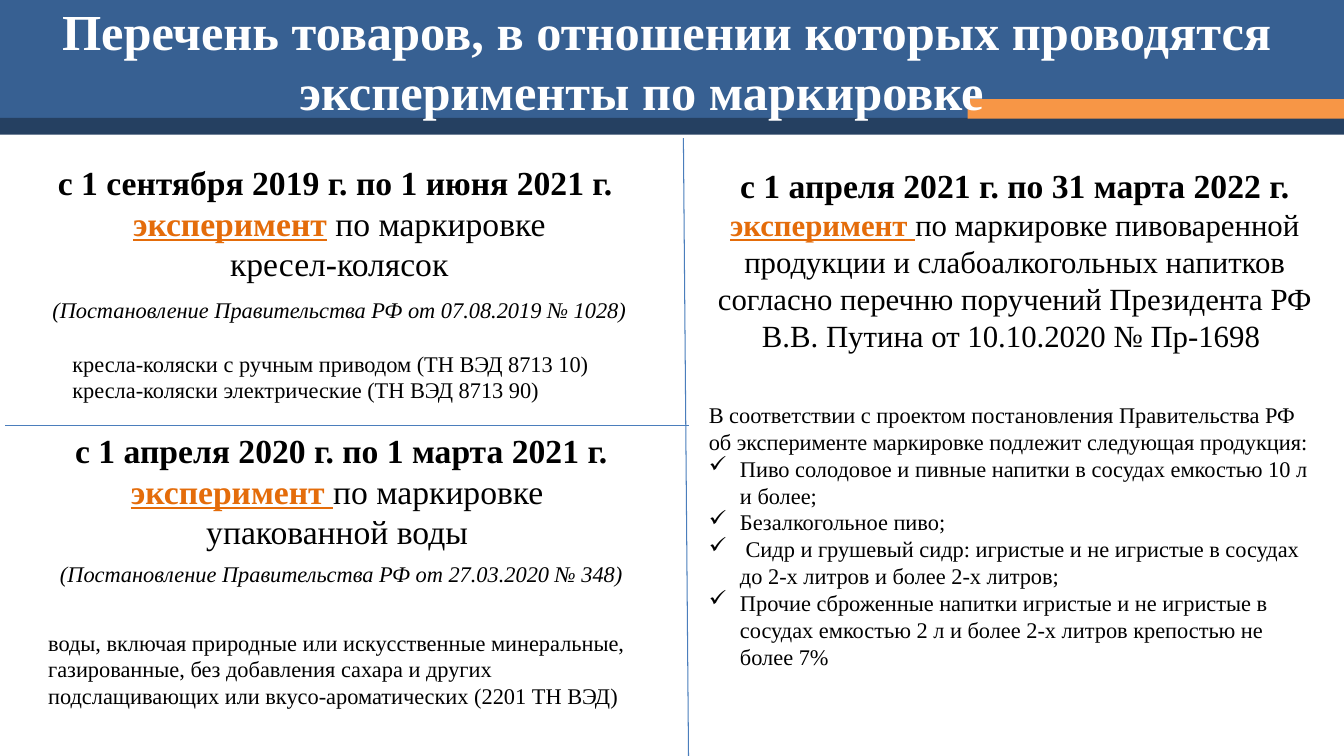
from dataclasses import dataclass

from lxml import etree
from pptx import Presentation, util as u
from pptx.dml.color import RGBColor
from pptx.enum import shapes, text
from pptx.oxml.ns import qn


@dataclass(frozen=True)
class Theme:
    font: str = "Times New Roman"
    blue: str = "376092"
    navy: str = "254061"
    orange: str = "F79646"
    accent: str = "E46C0A"
    rule: str = "4B7EBC"
    black: str = "000000"
    white: str = "FFFFFF"
    title: int = 36
    heading: int = 24
    lead: int = 22
    body: int = 16


THEME = Theme()


def add_span(para, wording, size=THEME.body, color=THEME.black, **style):
    """Add a run; style takes bold, italic and underline."""
    span = para.add_run()
    span.text = wording
    span.font.name = THEME.font
    span.font.size = u.Pt(size)
    span.font.color.rgb = RGBColor.from_string(color)
    for name, value in style.items():
        setattr(span.font, name, value)


class SlideBuilder:
    """Places elements by percentages of the slide's width and height."""

    def __init__(self, deck, theme):
        self.deck, self.theme = deck, theme
        self.page = deck.slides.add_slide(deck.slide_layouts[5])

    def across(self, share):
        return round(self.deck.slide_width * share / 100)

    def down(self, share):
        return round(self.deck.slide_height * share / 100)

    def area(self, left, top, width, height):
        return self.across(left), self.down(top), self.across(width), self.down(height)

    def band(self, place, color):
        bar = self.page.shapes.add_shape(shapes.MSO_SHAPE.RECTANGLE, *self.area(*place))
        bar.shadow.inherit = False
        bar.fill.solid()
        bar.fill.fore_color.rgb = RGBColor.from_string(color)
        bar.line.fill.background()

    def rule(self, start, end):
        line = self.page.shapes.add_connector(
            shapes.MSO_CONNECTOR.STRAIGHT,
            self.across(start[0]), self.down(start[1]),
            self.across(end[0]), self.down(end[1]))
        line.line.color.rgb = RGBColor.from_string(self.theme.rule)
        line.line.width = u.Pt(0.75)
        etree.SubElement(line.element.spPr, qn("a:effectLst"))

    def title(self, place, lines, last_indent):
        box = self.page.shapes.title
        box.left, box.top, box.width, box.height = self.area(*place)
        box.element.getparent().append(box.element)  # in front of the bands
        frame = box.text_frame
        frame.auto_size = text.MSO_AUTO_SIZE.NONE
        frame.vertical_anchor = text.MSO_ANCHOR.MIDDLE
        frame.margin_top = frame.margin_bottom = 0
        for index, line in enumerate(lines):
            para = frame.add_paragraph() if index else frame.paragraphs[0]
            para.alignment = text.PP_ALIGN.CENTER
            add_span(para, line, self.theme.title, self.theme.white, bold=True)
        para._p.get_or_add_pPr().set("marR", str(u.Inches(last_indent)))

    def text_box(self, place, paragraphs, centered=False, bullets_from=None, last_gap=0):
        """Each paragraph is a list of (wording, format) spans."""
        frame = self.page.shapes.add_textbox(*self.area(*place)).text_frame
        frame.word_wrap = True
        for index, spans in enumerate(paragraphs):
            para = frame.add_paragraph() if index else frame.paragraphs[0]
            if bullets_from is not None and index >= bullets_from:
                self.bullet(para)
            para.alignment = text.PP_ALIGN.CENTER if centered else text.PP_ALIGN.LEFT
            for wording, style in spans:
                add_span(para, wording, **style)
        if last_gap:
            para.space_before = u.Pt(last_gap)

    def bullet(self, para):
        props = para._p.get_or_add_pPr()
        props.set("marL", str(u.Inches(0.31)))
        props.set("indent", str(-u.Inches(0.31)))
        etree.SubElement(props, qn("a:buChar"), char="✓")


def main():
    deck = Presentation()
    deck.slide_width, deck.slide_height = u.Inches(13.33), u.Inches(7.5)
    slide = SlideBuilder(deck, THEME)

    # Text formats
    period = dict(size=THEME.heading, bold=True)
    plain = dict(size=THEME.heading)
    lead = dict(size=THEME.lead)
    decree = dict(italic=True)
    marked = dict(color=THEME.accent, bold=True, underline=True)

    # Header
    slide.band((0, 0, 100, 16), THEME.blue)
    slide.band((0, 15.6, 100, 2.2), THEME.navy)
    slide.band((72, 13.1, 28, 2.6), THEME.orange)
    slide.title((-0.38, 0, 100, 16),
                ["Перечень товаров, в отношении которых проводятся",
                 "эксперименты по маркировке"], last_indent=0.5)

    # Dividers
    slide.rule((50.85, 18.27), (51.23, 100))
    slide.rule((0.38, 56.27), (51.23, 56.27))

    # Wheelchairs
    slide.text_box((0.83, 20.8, 48.83, 22.9), [
        [("с 1 сентября 2019 г. по 1 июня 2021 г. ", period)],
        [("эксперимент", plain | marked), (" по маркировке", plain)],
        [("кресел-колясок", plain)],
        [("(Постановление Правительства РФ от 07.08.2019 № 1028)", decree)],
    ], centered=True, last_gap=9.5)
    slide.text_box((4.65, 45.6, 42.4, 8.8), [
        [("кресла-коляски с ручным приводом (ТН ВЭД 8713 10)", {})],
        [("кресла-коляски электрические (ТН ВЭД 8713 90)", {})],
    ])

    # Packaged water
    slide.text_box((0.38, 56.27, 50.03, 27.6), [
        [("с 1 апреля 2020 г. по 1 марта 2021 г. ", period),
         ("эксперимент ", plain | marked), ("по маркировке ", plain)],
        [("упакованной воды ", plain)],
        [("(Постановление Правительства РФ от 27.03.2020 № 348)", decree)],
    ], centered=True, last_gap=6)
    slide.text_box((2.85, 82.5, 46.73, 12.1), [
        [("воды, включая природные или искусственные минеральные, газированные, "
          "без добавления сахара и других подслащивающих или "
          "вкусо-ароматических (2201 ТН ВЭД)", {})],
    ])

    # Beer and light alcoholic drinks
    slide.text_box((52, 21.2, 47, 26.5), [
        [("с 1 апреля 2021 г. по 31 марта 2022 г. ", period),
         ("эксперимент ", lead | marked),
         ("по маркировке пивоваренной продукции и слабоалкогольных напитков "
          "согласно перечню поручений Президента РФ В.В. Путина "
          "от 10.10.2020 № Пр-1698 ", lead)],
    ], centered=True)
    slide.text_box((52, 52.4, 46.73, 40.9), [
        [(wording, {})] for wording in (
            "В соответствии с проектом постановления Правительства РФ "
            "об эксперименте маркировке подлежит следующая продукция:",
            "Пиво солодовое и пивные напитки в сосудах емкостью 10 л и более;",
            "Безалкогольное пиво;",
            " Сидр и грушевый сидр: игристые и не игристые в сосудах "
            "до 2-х литров и более 2-х литров;",
            "Прочие сброженные напитки игристые и не игристые в сосудах "
            "емкостью 2 л и более 2-х литров крепостью не более 7%")
    ], bullets_from=1)

    deck.save("out.pptx")


if __name__ == "__main__":
    main()
